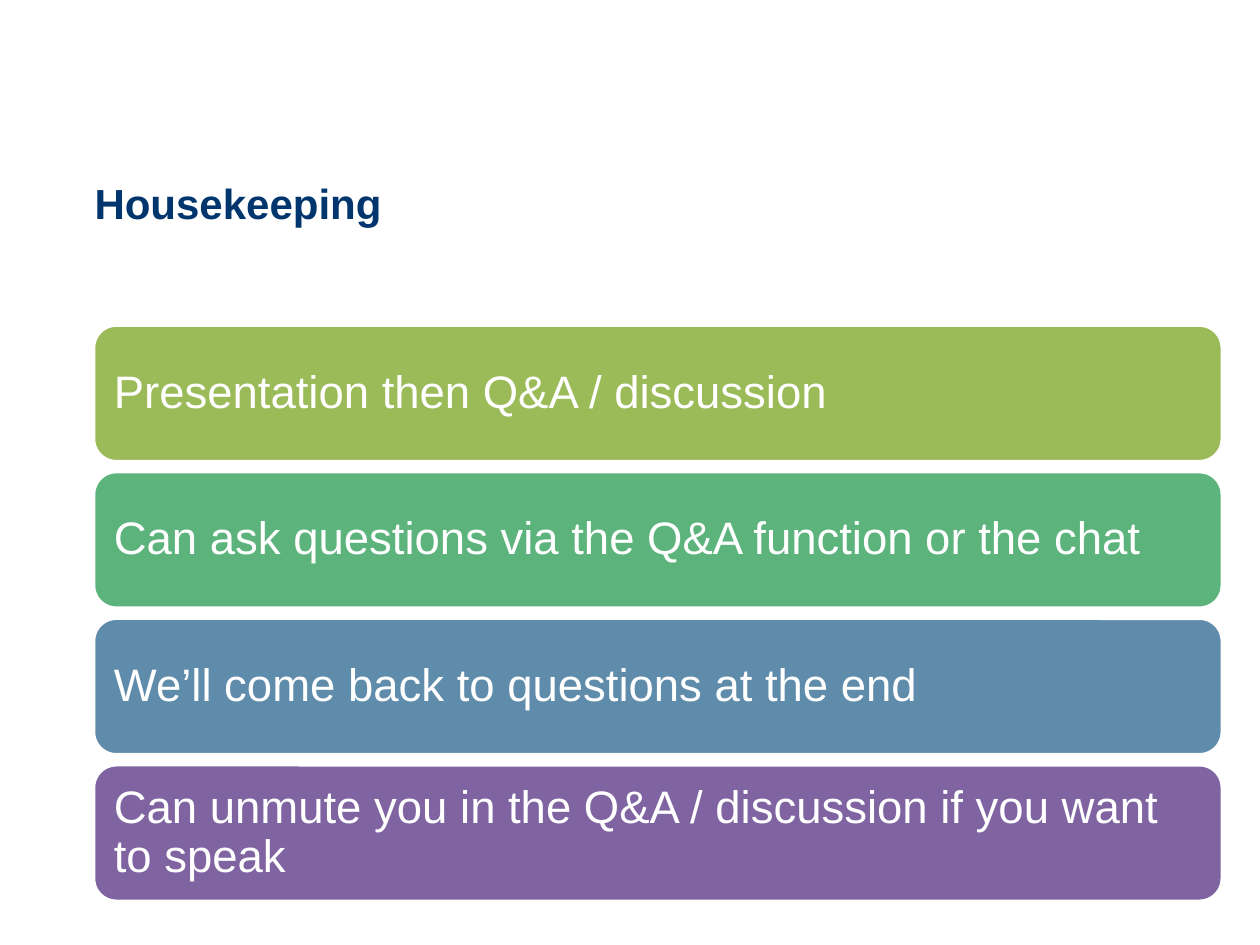
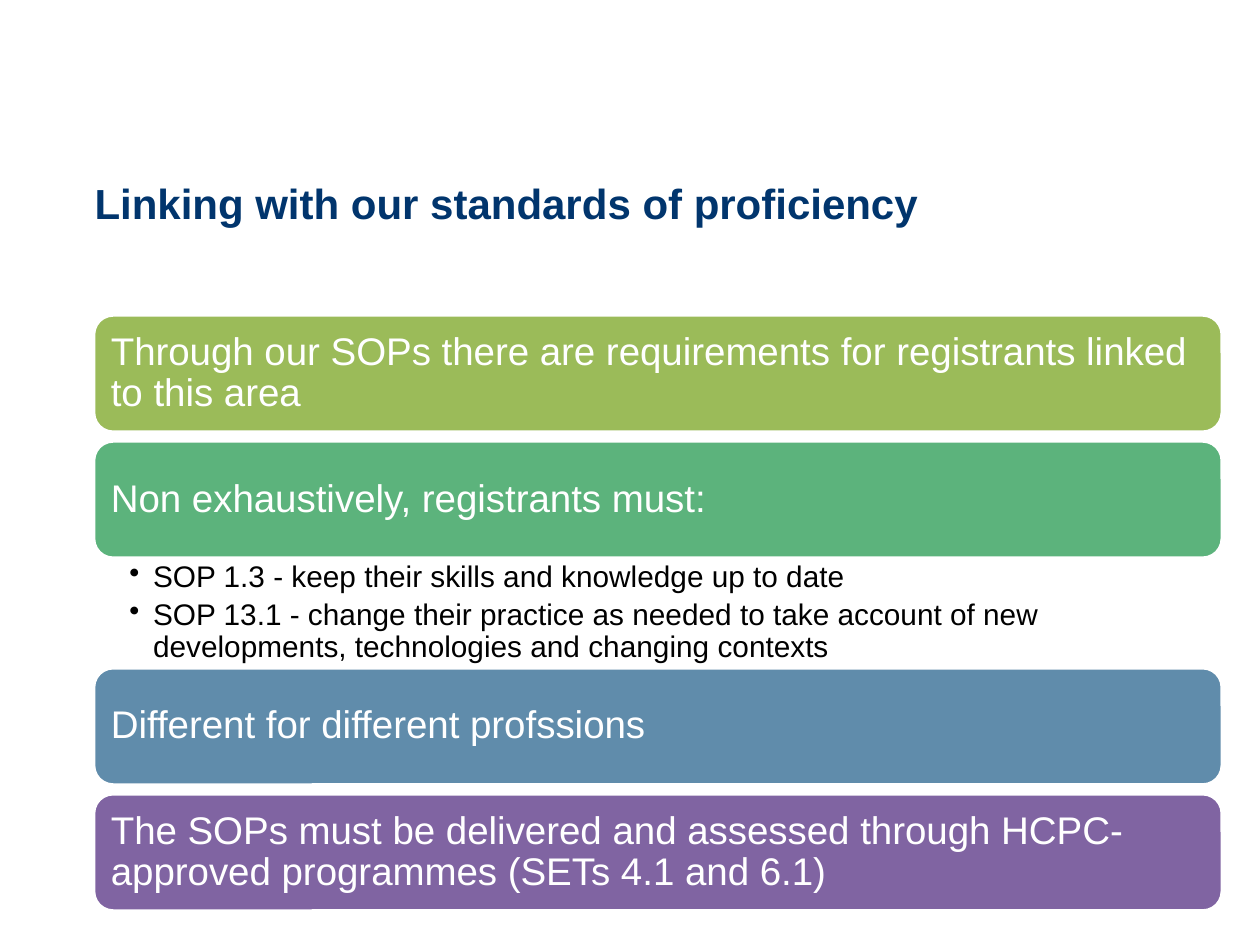
from dataclasses import dataclass

from lxml import etree
from pptx import Presentation
from pptx.dml.color import RGBColor
from pptx.enum.shapes import MSO_SHAPE
from pptx.enum.text import MSO_ANCHOR, MSO_AUTO_SIZE, PP_ALIGN
from pptx.oxml.ns import qn
from pptx.presentation import Presentation as Deck
from pptx.slide import Slide
from pptx.text.text import TextFrame
from pptx.util import Pt

ROUNDED = MSO_SHAPE.ROUNDED_RECTANGLE
TOP, MIDDLE = MSO_ANCHOR.TOP, MSO_ANCHOR.MIDDLE
LEFT = PP_ALIGN.LEFT
NO_FIT = MSO_AUTO_SIZE.NONE

# Shared look
FONT = "Arial"
NAVY = RGBColor(0x01, 0x35, 0x6D)
WHITE = RGBColor(0xFF, 0xFF, 0xFF)
BLACK = RGBColor(0x00, 0x00, 0x00)
BAND_COLOURS = (
    RGBColor(0x9B, 0xBB, 0x59),
    RGBColor(0x5C, 0xB3, 0x7C),
    RGBColor(0x60, 0x8C, 0xAB),
    RGBColor(0x80, 0x64, 0xA2),
)
BAND_LEFT, BAND_WIDTH = 53.5, 645
BULLET_SIZE, BULLET_INDENT = 17, 13.5
TITLE_PLACE = {"left": Pt(54), "top": Pt(101.5), "width": Pt(645), "height": Pt(36.7)}


@dataclass(frozen=True)
class Band:
    text: str
    bullets: tuple[str, ...] = ()


@dataclass(frozen=True)
class BandSlide:
    title: str
    bands: tuple[Band, ...]
    top: float
    height: float
    gap: float
    inset: float
    text_size: float
    bullets_height: float = 0


SLIDES = (
    BandSlide(
        "Housekeeping",
        (
            Band("Presentation then Q&A / discussion"),
            Band("Can ask questions via the Q&A function or the chat"),
            Band("We’ll come back to questions at the end"),
            Band("Can unmute you in the Q&A / discussion if you want to speak"),
        ),
        top=185.8, height=78, gap=5.75, inset=7.8, text_size=26,
    ),
    BandSlide(
        "Linking with our standards of proficiency",
        (
            Band("Through our SOPs there are requirements for registrants linked to this area"),
            Band(
                "Non exhaustively, registrants must:",
                (
                    "SOP 1.3 - keep their skills and knowledge up to date",
                    "SOP 13.1 - change their practice as needed to take account of new "
                    "developments, technologies and changing contexts",
                ),
            ),
            Band("Different for different profssions"),
            Band("The SOPs must be delivered and assessed through HCPC-approved "
                 "programmes (SETs 4.1 and 6.1)"),
        ),
        top=180, height=67, gap=5, inset=6.6, text_size=22, bullets_height=62.6,
    ),
)


def apply(target: object, values: dict[str, object]) -> None:
    for name, value in values.items():
        setattr(target, name, value)


def format_frame(frame: TextFrame, anchor: MSO_ANCHOR, left: float, top: float,
                 right: float, bottom: float) -> None:
    apply(frame, {
        "word_wrap": True, "auto_size": NO_FIT, "vertical_anchor": anchor,
        "margin_left": Pt(left), "margin_top": Pt(top),
        "margin_right": Pt(right), "margin_bottom": Pt(bottom),
    })


def write_lines(frame: TextFrame, lines: tuple[str, ...], size: float, colour: RGBColor,
                bold: bool = False, spacing: float = 1, after: float = 0,
                bulleted: bool = False) -> None:
    for index, line in enumerate(lines):
        paragraph = frame.add_paragraph() if index else frame.paragraphs[0]
        paragraph.text = line
        apply(paragraph, {"alignment": LEFT, "line_spacing": spacing,
                          "space_before": Pt(0), "space_after": Pt(after)})
        if bulleted:
            properties = paragraph._p.get_or_add_pPr()
            properties.set("marL", str(Pt(BULLET_INDENT)))
            properties.set("indent", str(-Pt(BULLET_INDENT)))
            etree.SubElement(properties, qn("a:buChar")).set("char", "•")
        font = paragraph.runs[0].font
        apply(font, {"name": FONT, "size": Pt(size), "bold": bold})
        font.color.rgb = colour


def add_title(slide: Slide, text: str) -> None:
    title = slide.shapes.title
    apply(title, TITLE_PLACE)
    format_frame(title.text_frame, TOP, 0, 0, 7.2, 0)
    write_lines(title.text_frame, (text,), 24, NAVY, bold=True)


def add_band(slide: Slide, band: Band, top: float, colour: RGBColor, content: BandSlide) -> None:
    bar = slide.shapes.add_shape(ROUNDED, Pt(BAND_LEFT), Pt(top), Pt(BAND_WIDTH), Pt(content.height))
    bar.shadow.inherit = False
    bar.fill.solid()
    bar.fill.fore_color.rgb = colour
    bar.line.color.rgb = WHITE
    bar.line.width = Pt(2)
    format_frame(bar.text_frame, MIDDLE, *[content.inset] * 4)
    write_lines(bar.text_frame, (band.text,), content.text_size, WHITE,
                spacing=0.9, after=round(content.text_size * 0.35, 1))


def add_bullets(slide: Slide, bullets: tuple[str, ...], top: float, height: float) -> None:
    details = slide.shapes.add_textbox(Pt(BAND_LEFT), Pt(top), Pt(BAND_WIDTH), Pt(height))
    format_frame(details.text_frame, TOP, 20.5, 2, 12, 2)
    write_lines(details.text_frame, bullets, BULLET_SIZE, BLACK,
                spacing=0.9, after=BULLET_SIZE * 0.2, bulleted=True)


def add_band_slide(deck: Deck, content: BandSlide) -> None:
    slide = deck.slides.add_slide(deck.slide_layouts[5])
    add_title(slide, content.title)
    top = content.top
    for band, colour in zip(content.bands, BAND_COLOURS):
        add_band(slide, band, top, colour, content)
        top += content.height
        # Bullets fill the space up to the next band
        if band.bullets:
            add_bullets(slide, band.bullets, top, content.bullets_height)
            top += content.bullets_height
        else:
            top += content.gap


def main() -> None:
    deck = Presentation()
    apply(deck, {"slide_width": Pt(720), "slide_height": Pt(540)})
    for content in SLIDES:
        add_band_slide(deck, content)
    deck.save("out.pptx")


if __name__ == "__main__":
    main()
